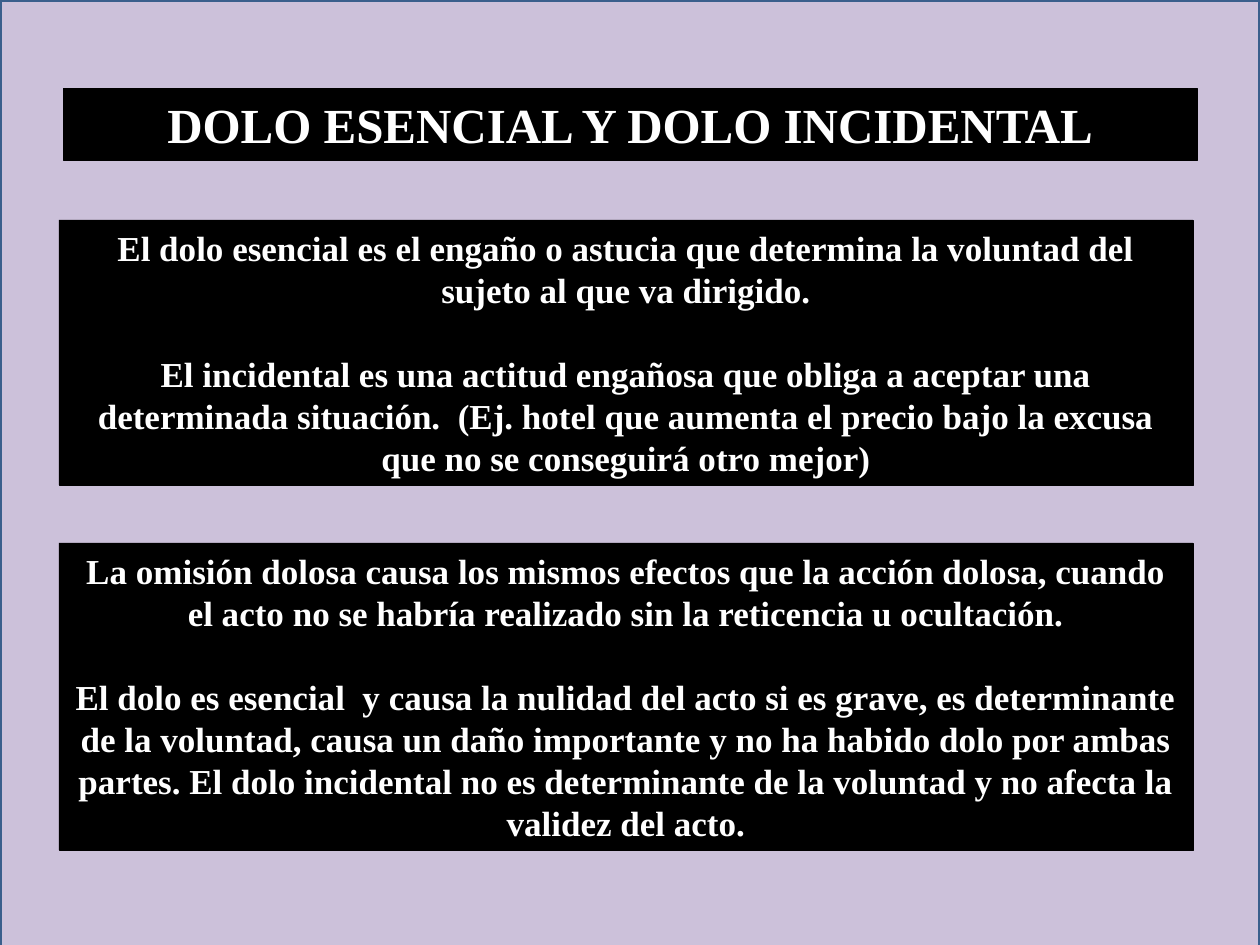
from dataclasses import dataclass

from pptx import Presentation
from pptx.dml.color import RGBColor
from pptx.enum.shapes import MSO_SHAPE
from pptx.enum.text import MSO_ANCHOR, PP_ALIGN
from pptx.util import Emu, Pt

PX_PER_INCH = 126
SLIDE_WIDTH, SLIDE_HEIGHT = 1260, 945


@dataclass(frozen=True)
class Theme:
    font: str = "Times New Roman"
    lilac: RGBColor = RGBColor(0xCC, 0xC1, 0xDA)
    frame: RGBColor = RGBColor(0x3A, 0x5F, 0x8C)
    panel: RGBColor = RGBColor(0, 0, 0)
    text: RGBColor = RGBColor(0xFF, 0xFF, 0xFF)
    title_size: int = 28
    body_size: int = 20
    leading: float = 1.2
    panel_line: float = 0.25
    frame_line: float = 2


THEME = Theme()

TITLE = "DOLO ESENCIAL Y DOLO INCIDENTAL"
PANEL_LEFT, PANEL_WIDTH = 59, 1134
DEFINITIONS = [
    "El dolo esencial es el engaño o astucia que determina la voluntad del "
    "sujeto al que va dirigido.",
    "El incidental es una actitud engañosa que obliga a aceptar una determinada "
    "situación.  (Ej. hotel que aumenta el precio bajo la excusa que no se "
    "conseguirá otro mejor)",
]
EFFECTS = [
    "La omisión dolosa causa los mismos efectos que la acción dolosa, cuando "
    "el acto no se habría realizado sin la reticencia u ocultación.",
    "El dolo es esencial  y causa la nulidad del acto si es grave, es determinante "
    "de la voluntad, causa un daño importante y no ha habido dolo por ambas "
    "partes. El dolo incidental no es determinante de la voluntad y no afecta la "
    "validez del acto.",
]


def px(length):
    return Emu(round(length * 914400 / PX_PER_INCH))


def paint(shape, fill, line, line_width):
    shape.fill.solid()
    shape.fill.fore_color.rgb = fill
    shape.line.color.rgb = line
    shape.line.width = Pt(line_width)


def write(shape, paragraphs, size):
    """Fill the shape with centred bold text, one blank line's gap between paragraphs."""
    frame = shape.text_frame
    frame.word_wrap = True
    frame.vertical_anchor = MSO_ANCHOR.MIDDLE
    frame.margin_left = frame.margin_right = Pt(7.2)
    frame.margin_top = frame.margin_bottom = Pt(3.6)
    frame.text = "\n".join(paragraphs)
    line_height = Pt(size * THEME.leading)
    for index, paragraph in enumerate(frame.paragraphs):
        paragraph.alignment = PP_ALIGN.CENTER
        paragraph.line_spacing = line_height
        paragraph.space_before = line_height if index else Pt(0)
        paragraph.space_after = Pt(0)
        font = paragraph.runs[0].font
        font.name = THEME.font
        font.size = Pt(size)
        font.bold = True
        font.color.rgb = THEME.text


def add_rectangle(slide, left, top, width, height):
    rectangle = slide.shapes.add_shape(
        MSO_SHAPE.RECTANGLE, px(left), px(top), px(width), px(height))
    rectangle.shadow.inherit = False
    return rectangle


def set_title(slide, left, top, width, height):
    title = slide.shapes.title
    title.left, title.top = px(left), px(top)
    title.width, title.height = px(width), px(height)
    paint(title, THEME.panel, THEME.panel, THEME.panel_line)
    write(title, [TITLE], THEME.title_size)


def add_backdrop(slide):
    """Framed lilac sheet behind the title; its lower edge runs past the slide."""
    backdrop = add_rectangle(slide, 0, 0, SLIDE_WIDTH, SLIDE_HEIGHT + 32)
    paint(backdrop, THEME.lilac, THEME.frame, THEME.frame_line)
    slide.shapes.title.element.addprevious(backdrop.element)


def add_panel(slide, top, height, paragraphs):
    panel = add_rectangle(slide, PANEL_LEFT, top, PANEL_WIDTH, height)
    paint(panel, THEME.panel, THEME.panel, THEME.panel_line)
    write(panel, paragraphs, THEME.body_size)


def main():
    presentation = Presentation()
    presentation.slide_width = px(SLIDE_WIDTH)
    presentation.slide_height = px(SLIDE_HEIGHT)
    slide = presentation.slides.add_slide(presentation.slide_layouts[5])
    add_backdrop(slide)
    set_title(slide, 63, 88, PANEL_WIDTH, 72)
    add_panel(slide, 220, 265, DEFINITIONS)
    add_panel(slide, 543, 307, EFFECTS)
    presentation.save("out.pptx")


if __name__ == "__main__":
    main()
